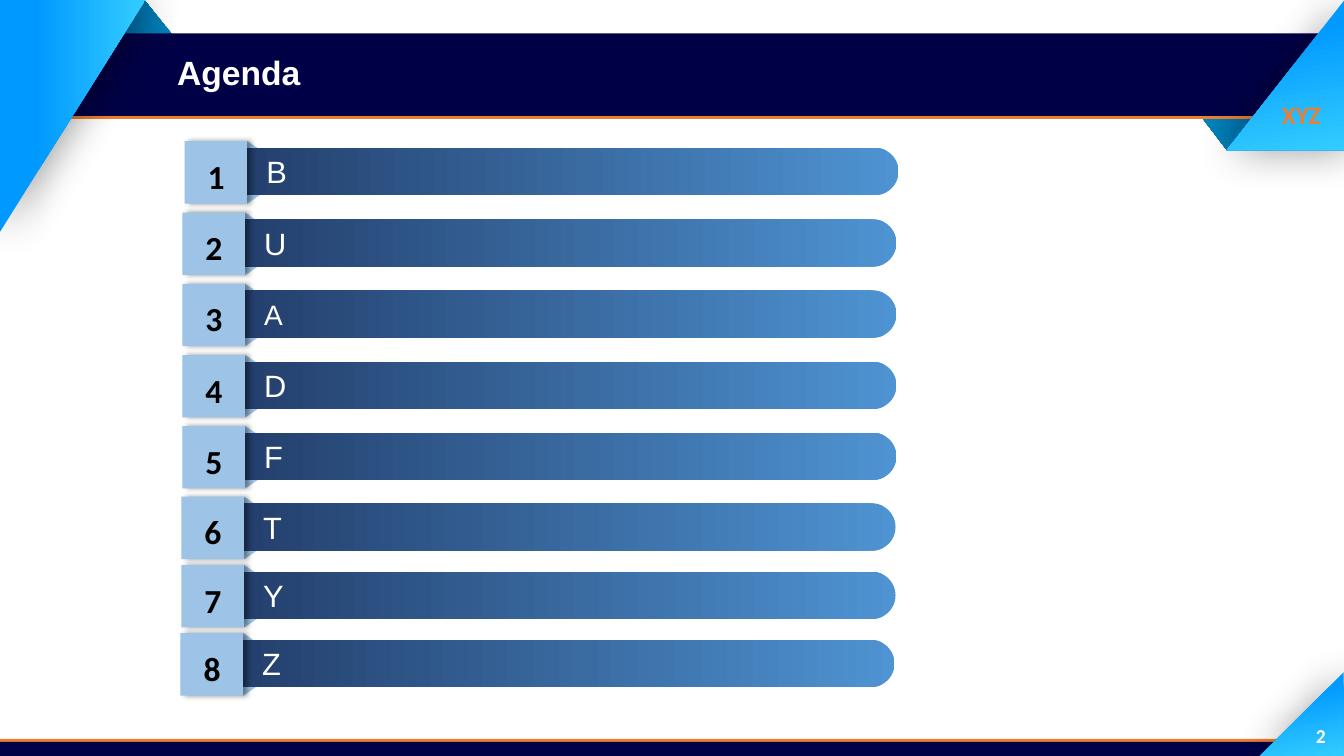
"""Build the agenda slide with eight numbered ribbons."""
from lxml.etree import SubElement
from pptx import Presentation
from pptx.dml.color import RGBColor
from pptx.enum.shapes import MSO_SHAPE as Shape
from pptx.enum.text import MSO_ANCHOR as Anchor, MSO_AUTO_SIZE as AutoSize, PP_ALIGN as Align
from pptx.oxml.ns import qn
from pptx.util import Pt

WHITE, BLACK, NAVY, ORANGE, PALE = "FFFFFF", "000000", "000046", "ED7D31", "9DC3E6"
FOLD = [(0, "00558E"), (100, "009ED6")]
CORNER = [(24, "0099FF"), (100, "33CCFF")]
RIBBON = [(0, "4E93D2"), (100, "203864")]
AGENDA = [
    ("B", 22, 131.8, 100.8),
    ("U", 22, 130.3, 151.9),
    ("A", 20, 130.3, 202.7),
    ("D", 22, 130.3, 253.6),
    ("F", 22, 130.3, 304.3),
    ("T", 22, 129.6, 354.8),
    ("Y", 22, 129.6, 403.6),
    ("Z", 22, 128.9, 452.3),
]


def color(value):
    return RGBColor.from_string(value)


class AgendaSlide:
    """Hold the slide style and draw its elements."""

    heading_font, number_font = "Arial", "Calibri"

    def __init__(self, deck):
        self.page = deck.slides.add_slide(deck.slide_layouts[6])
        self.shapes = self.page.shapes

    def shape(self, kind, box, fill, angle=0, rotation=0, adjust=None, flip=False, shadow=None):
        shape = self.shapes.add_shape(kind, *map(Pt, box))
        shape.rotation = rotation
        shape.line.fill.background()
        shape.shadow.inherit = False
        if adjust is not None:
            shape.adjustments[0] = adjust
        if flip:
            shape.element.spPr.find(qn("a:xfrm")).set("flipV", "1")
        if isinstance(fill, str):
            shape.fill.solid()
            shape.fill.fore_color.rgb = color(fill)
        else:
            shape.fill.gradient()
            shape.fill.gradient_angle = 360 - angle
            for stop, (position, value) in zip(shape.fill.gradient_stops, fill):
                stop.position = position / 100
                stop.color.rgb = color(value)
        if shadow:
            self.shadow(shape.element.spPr.find(qn("a:effectLst")), *shadow)
        return shape

    def shadow(self, effects, blur, distance, direction):
        outer = SubElement(effects, qn("a:outerShdw"), blurRad=str(Pt(blur)), dist=str(Pt(distance)),
                           dir=str(direction * 60000), algn="ctr", rotWithShape="0")
        tint = SubElement(outer, qn("a:srgbClr"), val=BLACK)
        SubElement(tint, qn("a:alpha"), val="40000")

    def caption(self, shape, words, size, font, ink, bold=False, align=Align.LEFT, indent=0):
        para = shape.text_frame.paragraphs[0]
        para.text = words
        para.alignment = align
        if indent:
            para._p.get_or_add_pPr().set("marL", str(Pt(indent)))
        para.font.size = Pt(size)
        para.font.name = font
        para.font.bold = bold
        para.font.color.rgb = color(ink)
        return para

    def label(self, box, words, size, font, ink, centered=False):
        label = self.shapes.add_textbox(*map(Pt, box))
        frame = label.text_frame
        frame.word_wrap = centered
        frame.auto_size = AutoSize.NONE if centered else AutoSize.SHAPE_TO_FIT_TEXT
        frame.vertical_anchor = Anchor.MIDDLE if centered else Anchor.TOP
        align = Align.CENTER if centered else Align.LEFT
        return self.caption(label, words, size, font, ink, True, align)

    def corner(self, box, rotation, angle):
        self.shape(Shape.ISOSCELES_TRIANGLE, box, CORNER, angle, rotation, 0, shadow=(30, 3, 0))

    def fold(self, box, rotation, adjust):
        self.shape(Shape.ISOSCELES_TRIANGLE, box, FOLD, 180, rotation, adjust, flip=True)

    def agenda_item(self, number, words, size, left, top):
        self.shapes = self.page.shapes.add_group_shape().shapes
        for drop, rotation in ((28, 180), (0, 0)):
            self.shape(Shape.ISOSCELES_TRIANGLE, (left + 20.9, top + drop, 48.2, 16.6), PALE, rotation=rotation)
        ribbon = self.shape(Shape.ROUNDED_RECTANGLE, (left + 3.2, top + 4.8, 506.9, 33.8), RIBBON, 180, adjust=0.5)
        ribbon.text_frame.vertical_anchor = Anchor.MIDDLE
        self.caption(ribbon, words, size, self.heading_font, WHITE, indent=43.2)
        self.shape(Shape.RECTANGLE, (left, top, 44.6, 44.6), PALE, shadow=(4, 3, 359))
        self.label((left + 9.4, top + 6.9, 26.6, 36), str(number), 24, self.number_font, BLACK)
        self.shapes = self.page.shapes


def main():
    deck = Presentation()
    deck.slide_width, deck.slide_height = Pt(960), Pt(540)
    slide = AgendaSlide(deck)

    slide.shape(Shape.RECTANGLE, (0, 527.8, 936, 10), ORANGE)
    slide.shape(Shape.RECTANGLE, (0, 529.9, 960, 10.1), NAVY)
    slide.fold((818.6, 31.7, 116.6, 75.6), 0, 0.496)
    slide.shape(Shape.RECTANGLE, (13, 25.9, 936, 59), ORANGE)
    slide.fold((57.6, 0, 104.4, 73.4), 180, 0.564)
    slide.shape(Shape.RECTANGLE, (7.2, 23.8, 943.2, 59), NAVY)
    slide.corner((-31, 31, 165.6, 103.7), 90, 270)
    slide.corner((864.7, 11.5, 107.3, 84.2), 270, 170)
    badge = slide.label((908.6, 67.7, 45.4, 28.8), "XYZ", 18, slide.number_font, ORANGE)
    slide.shadow(SubElement(badge.runs[0].font._element, qn("a:effectLst")), 4, 3, 270)
    slide.corner((900, 480.2, 59.8, 59.8), 270, 170)

    slide.label((119.5, 33.8, 103.7, 36), "Agenda", 24, slide.heading_font, WHITE)
    slide.label((926.6, 511.2, 33.8, 28.8), "2", 14, slide.number_font, WHITE, centered=True)
    for number, item in enumerate(AGENDA, 1):
        slide.agenda_item(number, *item)
    deck.save("out.pptx")


if __name__ == "__main__":
    main()
